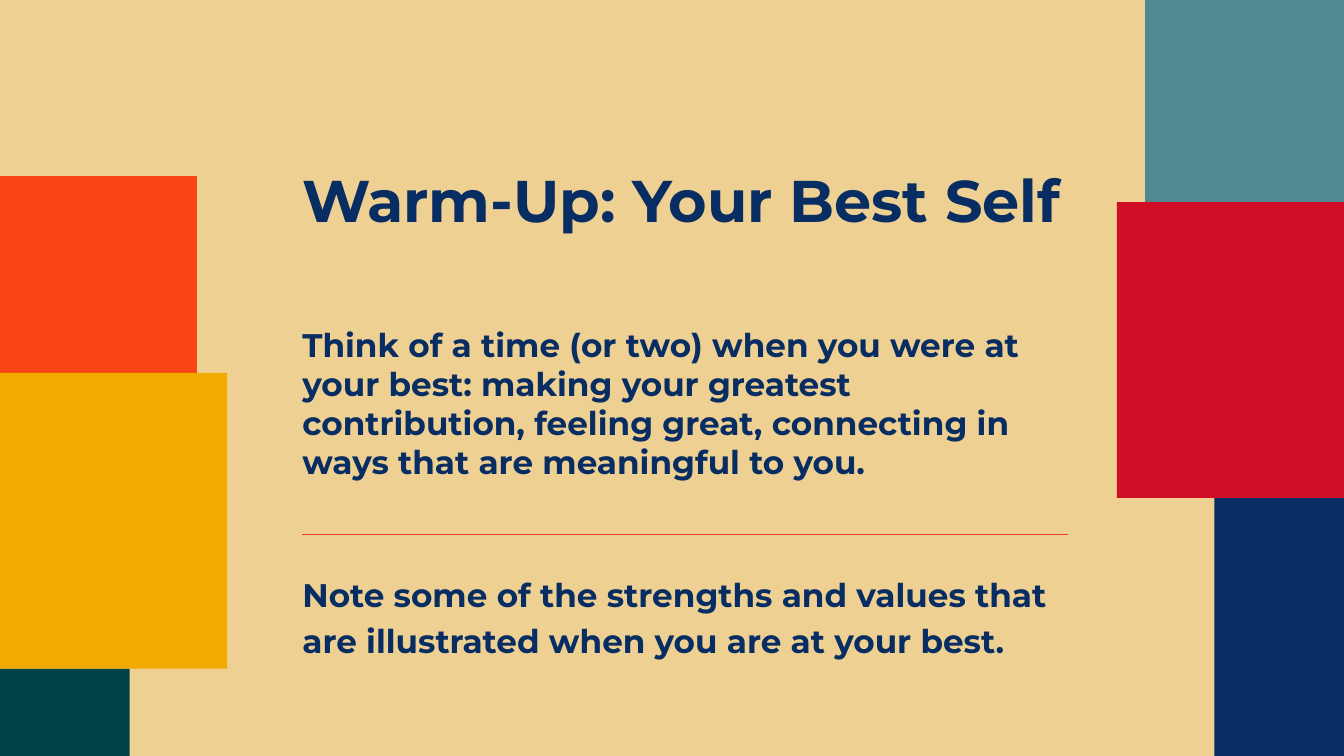
import pptx
import pptx.dml.color
import pptx.enum.shapes
import pptx.enum.text
import pptx.oxml.ns
import pptx.util
from dataclasses import dataclass
from lxml import etree

Inches = pptx.util.Inches
Pt = pptx.util.Pt
RGBColor = pptx.dml.color.RGBColor


@dataclass(frozen=True)
class Theme:
    font: str = "Montserrat"
    title_size: float = 63
    body_size: float = 35
    sand: str = "EED093"
    navy: str = "082D63"
    teal: str = "508991"
    red: str = "CF0E25"
    orange: str = "FA4616"
    amber: str = "F2A900"
    pine: str = "004346"
    rule: str = "EF3B3B"


theme = Theme()


def write_text(shape, text, box, size, line_spacing):
    """Place a text shape and fill it with one bold, left-aligned paragraph."""
    shape.left, shape.top, shape.width, shape.height = map(Inches, box)
    frame_format = {
        "margin_left": 0, "margin_top": 0, "margin_right": 0, "margin_bottom": 0,
        "word_wrap": True,
        "auto_size": pptx.enum.text.MSO_AUTO_SIZE.NONE,
        "vertical_anchor": pptx.enum.text.MSO_ANCHOR.TOP,
    }
    for name, value in frame_format.items():
        setattr(shape.text_frame, name, value)
    paragraph = shape.text_frame.paragraphs[0]
    paragraph.alignment = pptx.enum.text.PP_ALIGN.LEFT
    paragraph.line_spacing = Pt(line_spacing)
    run = paragraph.add_run()
    run.text = text
    font_format = {"name": theme.font, "size": Pt(size), "bold": True}
    for name, value in font_format.items():
        setattr(run.font, name, value)
    run.font.color.rgb = RGBColor.from_string(theme.navy)


presentation = pptx.Presentation()
presentation.slide_width = Inches(20)
presentation.slide_height = Inches(11.25)
slide = presentation.slides.add_slide(presentation.slide_layouts[5])
slide.background.fill.solid()
slide.background.fill.fore_color.rgb = RGBColor.from_string(theme.sand)

# Title and body text share one column
column_left, column_width = 4.5, 11.4
write_text(slide.shapes.title, "Warm-Up: Your Best Self",
           (column_left, 2.43, column_width, 1.04), theme.title_size, 75.6)

prompts = [
    ("Think of a time (or two) when you were at your best: making your greatest "
     "contribution, feeling great, connecting in ways that are meaningful to you.",
     4.83, 2.29, 42),
    ("Note some of the strengths and values that are illustrated when you are "
     "at your best.", 8.46, 1.31, 49),
]
for text, top, height, line_spacing in prompts:
    text_box = slide.shapes.add_textbox(0, 0, 0, 0)
    write_text(text_box, text, (column_left, top, column_width, height),
               theme.body_size, line_spacing)

divider = slide.shapes.add_connector(
    pptx.enum.shapes.MSO_CONNECTOR.STRAIGHT,
    Inches(column_left), Inches(7.96), Inches(column_left + column_width), Inches(7.96))
divider.line.color.rgb = RGBColor.from_string(theme.rule)
divider.line.width = Pt(1)
etree.SubElement(divider.element.spPr, pptx.oxml.ns.qn("a:effectLst"))

# Colour blocks along both edges, from back to front
blocks = [
    (theme.teal, 17.04, 0, 2.96, 3.01),
    (theme.navy, 18.07, 7.41, 1.93, 3.84),
    (theme.red, 16.62, 3.01, 3.38, 4.4),
    (theme.orange, -0.03, 2.62, 2.96, 3.01),
    (theme.pine, 0, 9.95, 1.93, 3.84),
    (theme.amber, 0, 5.55, 3.38, 4.4),
]
for color, *box in blocks:
    block = slide.shapes.add_shape(
        pptx.enum.shapes.MSO_SHAPE.RECTANGLE, *map(Inches, box))
    block.shadow.inherit = False
    block.fill.solid()
    block.fill.fore_color.rgb = RGBColor.from_string(color)
    block.line.fill.background()

presentation.save("out.pptx")
